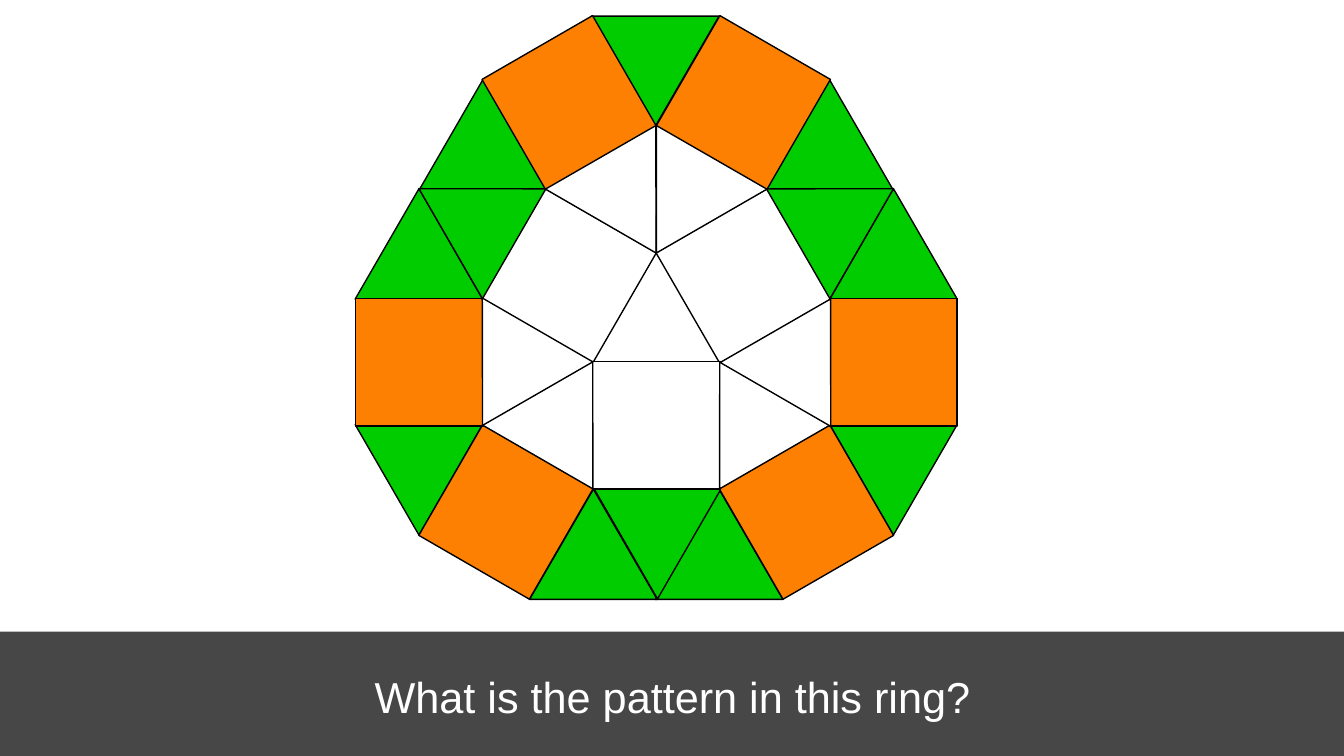
from lxml import etree
from pptx import Presentation
from pptx import util as u
from pptx.dml.color import RGBColor
from pptx.enum import shapes, text
from pptx.oxml import ns

PX = 4572
SIDE = 190
HEIGHT = 164
MIRROR_SUM = 1763

BLACK = RGBColor(0x00, 0x00, 0x00)
WHITE = RGBColor(0xFF, 0xFF, 0xFF)
GREEN = RGBColor(0x00, 0xCC, 0x00)
ORANGE = RGBColor(0xFE, 0x80, 0x02)

GREEN_PAIRS = [(788, 728, 0), (552, 591, 60), (552, 322, 120),
               (647, 160, 120), (647, 240, 60)]
GREEN_SINGLES = [(880, 24, 180), (860, 686, 300)]
ORANGE_PAIRS = [(658, 667, 30), (529, 444, 0), (752, 58, 330)]
WHITE_SQUARE_PAIRS = [(752, 316, 30)]
WHITE_SQUARE_SINGLES = [(882, 538, 0)]
WHITE_PAIRS = [(746, 527, 30), (840, 176, 30)]
WHITE_SINGLES = [(664, 480, 210), (1100, 434, 30)]


def px(*lengths):
    return [u.Emu(length * PX) for length in lengths]


def with_mirrors(tiles):
    for left, top, angle in tiles:
        yield left, top, angle
        yield MIRROR_SUM - left, top, -angle % 360


def add_tiles(slide, kind, height, color, tiles):
    for left, top, angle in tiles:
        tile = slide.shapes.add_shape(kind, *px(left, top, SIDE, height))
        tile.rotation = angle
        tile.shadow.inherit = False
        tile.fill.solid()
        tile.fill.fore_color.rgb = color
        tile.line.color.rgb = BLACK
        tile.line.width = u.Pt(0.75)


def add_triangles(slide, color, pairs, singles):
    add_tiles(slide, shapes.MSO_SHAPE.ISOSCELES_TRIANGLE, HEIGHT, color,
              [*with_mirrors(pairs), *singles])


def add_squares(slide, color, pairs, singles=()):
    add_tiles(slide, shapes.MSO_SHAPE.RECTANGLE, SIDE, color,
              [*with_mirrors(pairs), *singles])


def add_question_band(slide):
    band = slide.shapes.add_shape(shapes.MSO_SHAPE.RECTANGLE,
                                  *px(0, 940, 2000, 188))
    band.shadow.inherit = False
    band.fill.solid()
    band.fill.fore_color.rgb = BLACK
    band.line.fill.background()
    color = band.fill._xPr.find(".//" + ns.qn("a:srgbClr"))
    etree.SubElement(color, ns.qn("a:alpha"), val="72000")


def add_question(slide, wording):
    question = slide.shapes.add_textbox(*px(326, 942, 1350, 188))
    frame = question.text_frame
    frame.word_wrap = True
    frame.vertical_anchor = text.MSO_ANCHOR.MIDDLE
    paragraph = frame.paragraphs[0]
    paragraph.text = wording
    paragraph.alignment = text.PP_ALIGN.CENTER
    paragraph.font.name = "Arial"
    paragraph.font.size = u.Pt(23.2)
    paragraph.font.color.rgb = WHITE


def main():
    deck = Presentation()
    deck.slide_width, deck.slide_height = px(2000, 1125)
    slide = deck.slides.add_slide(deck.slide_layouts[6])
    add_question_band(slide)
    add_question(slide, "What is the pattern in this ring?")
    add_triangles(slide, GREEN, GREEN_PAIRS, GREEN_SINGLES)
    add_squares(slide, ORANGE, ORANGE_PAIRS)
    add_squares(slide, WHITE, WHITE_SQUARE_PAIRS, WHITE_SQUARE_SINGLES)
    add_triangles(slide, WHITE, WHITE_PAIRS, WHITE_SINGLES)
    deck.save("out.pptx")


if __name__ == "__main__":
    main()
